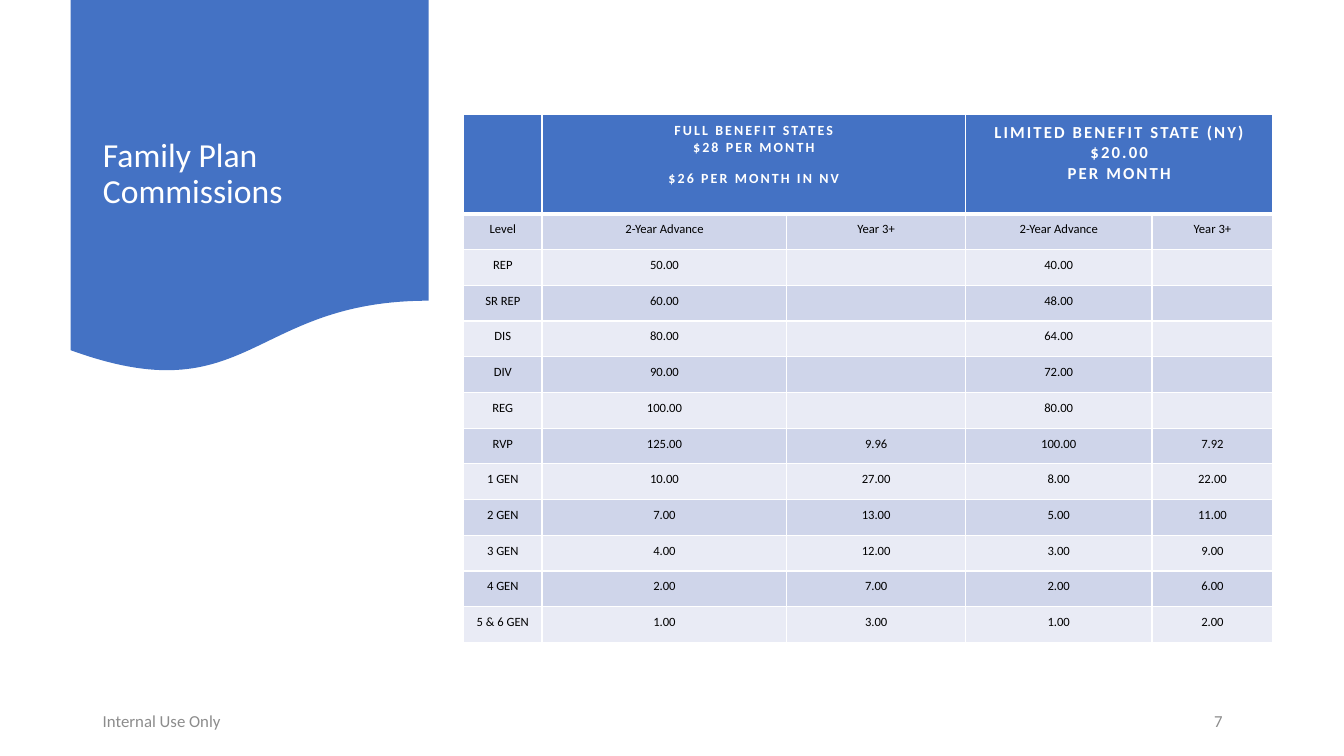
"""Builds the Family Plan Commissions slide."""
import lxml.etree
import pptx
import pptx.dml.color
import pptx.enum.shapes
import pptx.enum.text
import pptx.oxml.ns
import pptx.util

Cm = pptx.util.Cm
Pt = pptx.util.Pt
qn = pptx.oxml.ns.qn
ANCHOR = pptx.enum.text.MSO_ANCHOR
ALIGN = pptx.enum.text.PP_ALIGN

FONT = "Calibri"
BLUE, WHITE, BLACK, GREY = "4472C4", "FFFFFF", "000000", "8C8C8C"
BANDS = ["CFD5EA", "E9EBF5"]
COLUMN_WIDTHS = [1.98, 6.17, 4.5, 4.7, 3.05]
HEADER_HEIGHT, ROW_HEIGHT = 2.51, 0.9
FULL_BENEFIT = ["FULL BENEFIT STATES", "$28 PER MONTH", "$26 PER MONTH IN NV"]
LIMITED_BENEFIT = ["LIMITED BENEFIT STATE (NY)", "$20.00", "PER MONTH"]
COMMISSIONS = [
    ["Level", "2-Year Advance", "Year 3+", "2-Year Advance", "Year 3+"],
    ["REP", "50.00", "", "40.00", ""],
    ["SR REP", "60.00", "", "48.00", ""],
    ["DIS", "80.00", "", "64.00", ""],
    ["DIV", "90.00", "", "72.00", ""],
    ["REG", "100.00", "", "80.00", ""],
    ["RVP", "125.00", "9.96", "100.00", "7.92"],
    ["1 GEN", "10.00", "27.00", "8.00", "22.00"],
    ["2 GEN", "7.00", "13.00", "5.00", "11.00"],
    ["3 GEN", "4.00", "12.00", "3.00", "9.00"],
    ["4 GEN", "2.00", "7.00", "2.00", "6.00"],
    ["5 & 6 GEN", "1.00", "3.00", "1.00", "2.00"],
]


def rgb(hex_code):
    return pptx.dml.color.RGBColor.from_string(hex_code)


def add_span(para, text, size, color, bold=False, spacing=0):
    span = para.add_run()
    span.text = text
    span.font.name = FONT
    span.font.size = Pt(size)
    span.font.bold = bold
    span.font.color.rgb = rgb(color)
    if spacing:
        span.font._element.set("spc", str(int(spacing * 100)))


def add_banner(page):
    banner = page.shapes.add_shape(
        pptx.enum.shapes.MSO_SHAPE.FLOWCHART_DOCUMENT,
        Cm(1.78), Cm(0), Cm(9.02), Cm(9.45))
    banner.shadow.inherit = False
    banner.fill.solid()
    banner.fill.fore_color.rgb = rgb(BLUE)
    banner.line.fill.background()


def place_title(page, lines):
    title = page.shapes.title
    title.left, title.top, title.width, title.height = Cm(2.34), Cm(0.48), Cm(7.9), Cm(6.58)
    page.shapes._spTree.append(title._element)
    frame = title.text_frame
    frame.auto_size = pptx.enum.text.MSO_AUTO_SIZE.NONE
    frame.word_wrap = True
    frame.vertical_anchor = ANCHOR.MIDDLE
    frame.margin_top = Cm(1.37)
    para = frame.paragraphs[0]
    para.alignment = ALIGN.LEFT
    para.line_spacing = 0.9
    for index, line in enumerate(lines):
        if index:
            para.add_line_break()
        add_span(para, line, 24, WHITE)


def add_footer(page, text, left, width):
    box = page.shapes.add_textbox(Cm(left), Cm(17.65), Cm(width), Cm(1.02))
    frame = box.text_frame
    frame.word_wrap = True
    frame.vertical_anchor = ANCHOR.MIDDLE
    para = frame.paragraphs[0]
    para.space_after = Pt(6)
    add_span(para, text, 12, GREY)


def style_cell(cell, fill, top=1, bottom=1):
    properties = cell._tc.get_or_add_tcPr()
    for side, width in (("L", 1), ("R", 1), ("T", top), ("B", bottom)):
        line = lxml.etree.SubElement(properties, qn("a:ln" + side), w=str(Pt(width)))
        paint = lxml.etree.SubElement(line, qn("a:solidFill"))
        lxml.etree.SubElement(paint, qn("a:srgbClr"), val=WHITE)
    cell.fill.solid()
    cell.fill.fore_color.rgb = rgb(fill)
    cell.vertical_anchor = ANCHOR.TOP
    cell.margin_left = cell.margin_right = Cm(0.2)
    cell.margin_top = cell.margin_bottom = Cm(0.2)


def write_cell(cell, lines, size, color, bold=False, spacing=0):
    frame = cell.text_frame
    for index, line in enumerate(lines):
        para = frame.add_paragraph() if index else frame.paragraphs[0]
        para.alignment = ALIGN.CENTER
        if line:
            add_span(para, line, size, color, bold, spacing)
        else:
            lxml.etree.SubElement(para._p, qn("a:endParaRPr"), sz=str(size * 100))


def add_commission_table(page):
    row_count = len(COMMISSIONS) + 1
    table = page.shapes.add_table(
        row_count, len(COLUMN_WIDTHS), Cm(11.68), Cm(2.88), Cm(sum(COLUMN_WIDTHS)),
        Cm(HEADER_HEIGHT + ROW_HEIGHT * len(COMMISSIONS))).table
    for column, width in zip(table.columns, COLUMN_WIDTHS):
        column.width = Cm(width)
    for index, row in enumerate(table.rows):
        row.height = Cm(ROW_HEIGHT if index else HEADER_HEIGHT)
    for cell in table.rows[0].cells:
        style_cell(cell, BLUE, bottom=3)
    for column, lines, size in ((1, FULL_BENEFIT, 10), (3, LIMITED_BENEFIT, 12)):
        heading = table.cell(0, column)
        heading.merge(table.cell(0, column + 1))
        write_cell(heading, lines, size, WHITE, True, 1.5)
    table.cell(0, 1).text_frame.paragraphs[-1].space_before = Pt(10)
    for index, values in enumerate(COMMISSIONS):
        for cell, value in zip(table.rows[index + 1].cells, values):
            style_cell(cell, BANDS[index % 2], top=1 if index else 3)
            write_cell(cell, [value], 9, BLACK)


def main():
    deck = pptx.Presentation()
    deck.slide_width, deck.slide_height = Cm(33.87), Cm(19.05)
    page = deck.slides.add_slide(deck.slide_layouts[5])
    add_banner(page)
    place_title(page, ["Family Plan", "Commissions"])
    add_footer(page, "Internal Use Only", 2.34, 16.56)
    add_footer(page, "7", 30.35, 1.73)
    add_commission_table(page)
    deck.save("out.pptx")


if __name__ == "__main__":
    main()
